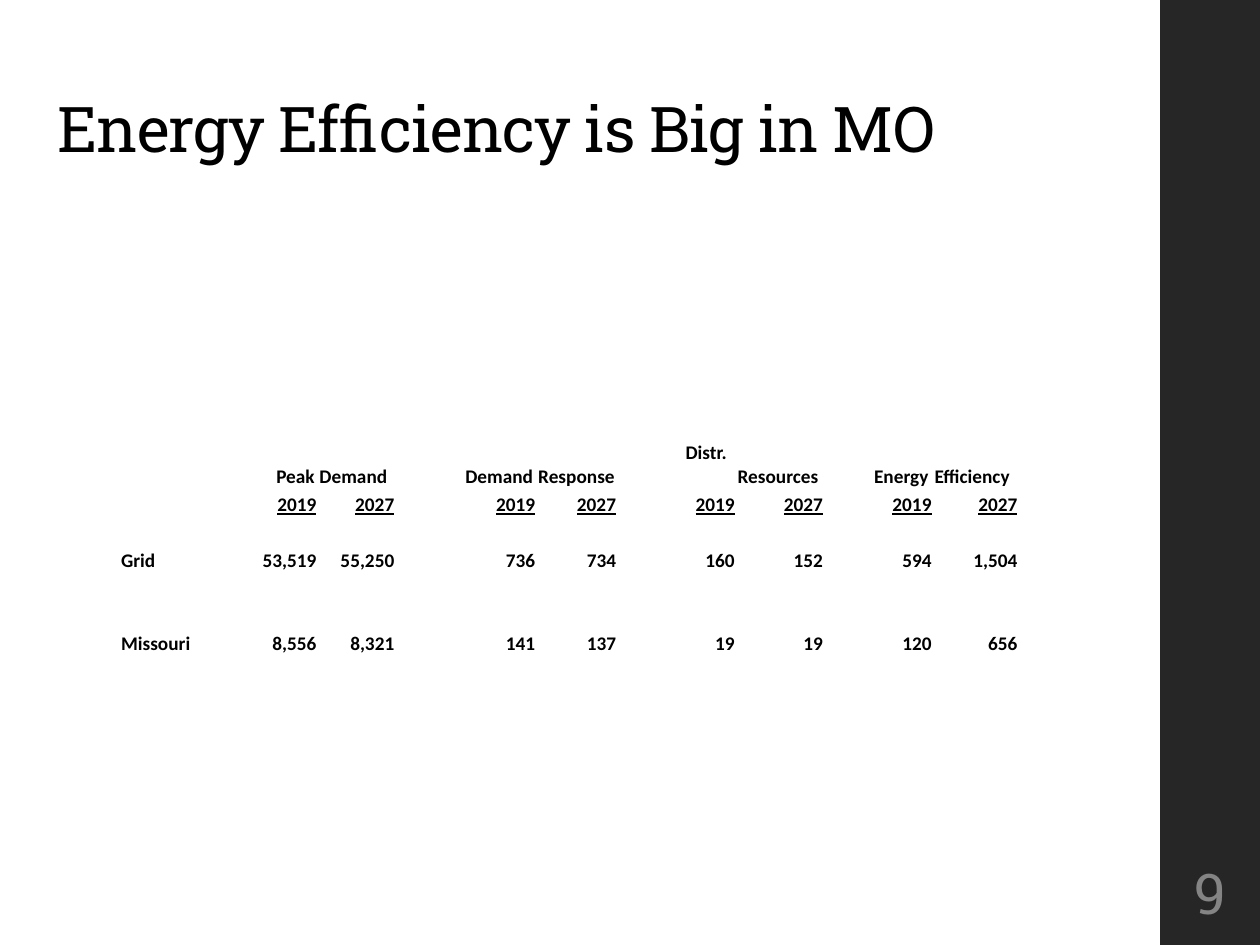
from pptx import Presentation
from pptx.dml.color import RGBColor
from pptx.enum import shapes, text
from pptx.util import Cm, Pt

COLUMN_WIDTHS = [1.57, 1.24, 1.19, 1.57, 1.37, 1.47, 1.63, 1.02, 1.37, 1.78, 0.97, 1.22, 1.73]
ROW_HEIGHTS = [1.35, 0.99, 0.56, 0.56, 0.56, 0.56, 1.12]
VALUE_COLUMNS = [2, 3, 5, 6, 8, 9, 11, 12]
HEADINGS = ["Peak", "Demand", "Demand", "Response", "Distr.", "Resources", "Energy", "Efficiency"]
YEARS = ["2019", "2027"] * 4
REGIONS = {
    4: ("Grid", ["53,519", "55,250", "736", "734", "160", "152", "594", "1,504"]),
    6: ("Missouri", ["8,556", "8,321", "141", "137", "19", "19", "120", "656"]),
}
SLAB = "Roboto Slab"


def color(value):
    """Return the colour for a hex string."""
    return RGBColor.from_string(value)


def style(paragraph, name, size, value, bold=False):
    """Set the font of a paragraph."""
    font = paragraph.font
    font.name, font.size, font.bold = name, Pt(size), bold
    font.color.rgb = color(value)


def add_sidebar(slide):
    """Draw the dark band along the right edge."""
    shape = slide.shapes.add_shape(
        shapes.MSO_SHAPE.RECTANGLE, Cm(23.39), 0, Cm(2.01), Cm(19.05))
    shape.shadow.inherit = False
    shape.fill.solid()
    shape.fill.fore_color.rgb = color("262626")
    shape.line.fill.background()


def set_title(slide, words):
    """Place and format the title placeholder."""
    title = slide.shapes.title
    title.left, title.top, title.width, title.height = Cm(0.91), Cm(1.12), Cm(21.95), Cm(2.36)
    frame = title.text_frame
    frame.text = words
    frame.word_wrap = True
    frame.auto_size = text.MSO_AUTO_SIZE.NONE
    frame.vertical_anchor = text.MSO_ANCHOR.BOTTOM
    paragraph = frame.paragraphs[0]
    paragraph.alignment = text.PP_ALIGN.LEFT
    paragraph.line_spacing = 0.9
    style(paragraph, SLAB, 36, "000000")
    paragraph.runs[0]._r.get_or_add_rPr().set("spc", "-50")


def add_page_number(slide, number):
    """Write the page number on the sidebar."""
    box = slide.shapes.add_textbox(Cm(23.44), Cm(17.15), Cm(1.9), Cm(1.65))
    frame = box.text_frame
    frame.word_wrap = True
    frame.vertical_anchor = text.MSO_ANCHOR.MIDDLE
    frame.margin_left = frame.margin_right = Cm(0.08)
    paragraph = frame.paragraphs[0]
    paragraph.text = number
    paragraph.alignment = text.PP_ALIGN.CENTER
    style(paragraph, SLAB, 32, "848484")


def add_grid(slide):
    """Add the table with plain, tightly spaced cells."""
    table = slide.shapes.add_table(
        len(ROW_HEIGHTS), len(COLUMN_WIDTHS), Cm(2.41), Cm(7.52),
        Cm(sum(COLUMN_WIDTHS)), Cm(sum(ROW_HEIGHTS))).table
    table.first_row = table.horz_banding = False
    for column, width in zip(table.columns, COLUMN_WIDTHS):
        column.width = Cm(width)
    for row, height in zip(table.rows, ROW_HEIGHTS):
        row.height = Cm(height)
    for cell in table.iter_cells():
        cell.fill.background()
        cell.margin_left = cell.margin_right = cell.margin_top = Cm(0.03)
        cell.margin_bottom = 0
        cell.vertical_anchor = text.MSO_ANCHOR.BOTTOM
        style(cell.text_frame.paragraphs[0], "Calibri", 11, "000000", True)
    return table


def write(cell, words, align=text.PP_ALIGN.LEFT, underline=None):
    """Write bold black text in a cell."""
    paragraph = cell.text_frame.paragraphs[0]
    paragraph.text = words
    paragraph.alignment = align
    style(paragraph, "Calibri", 11, "000000", True)
    paragraph.font.underline = underline


def fill_values(table, row, values, **options):
    """Write one entry in each value column of a row."""
    for column, value in zip(VALUE_COLUMNS, values):
        write(table.cell(row, column), value, **options)


def main():
    """Build the slide and save it."""
    presentation = Presentation()
    presentation.slide_width, presentation.slide_height = Cm(25.4), Cm(19.05)
    slide = presentation.slides.add_slide(presentation.slide_layouts[5])
    add_sidebar(slide)
    set_title(slide, "Energy Efficiency is Big in MO")
    add_page_number(slide, "9")
    table = add_grid(slide)
    right = text.PP_ALIGN.RIGHT
    fill_values(table, 1, HEADINGS)
    for column in (2, 8):
        table.cell(1, column).margin_left = Cm(0.35)
    table.cell(1, 8).vertical_anchor = text.MSO_ANCHOR.TOP
    fill_values(table, 2, YEARS, align=right, underline=True)
    for row, (region, values) in REGIONS.items():
        write(table.cell(row, 0), region)
        fill_values(table, row, values, align=right)
    presentation.save("out.pptx")


if __name__ == "__main__":
    main()
